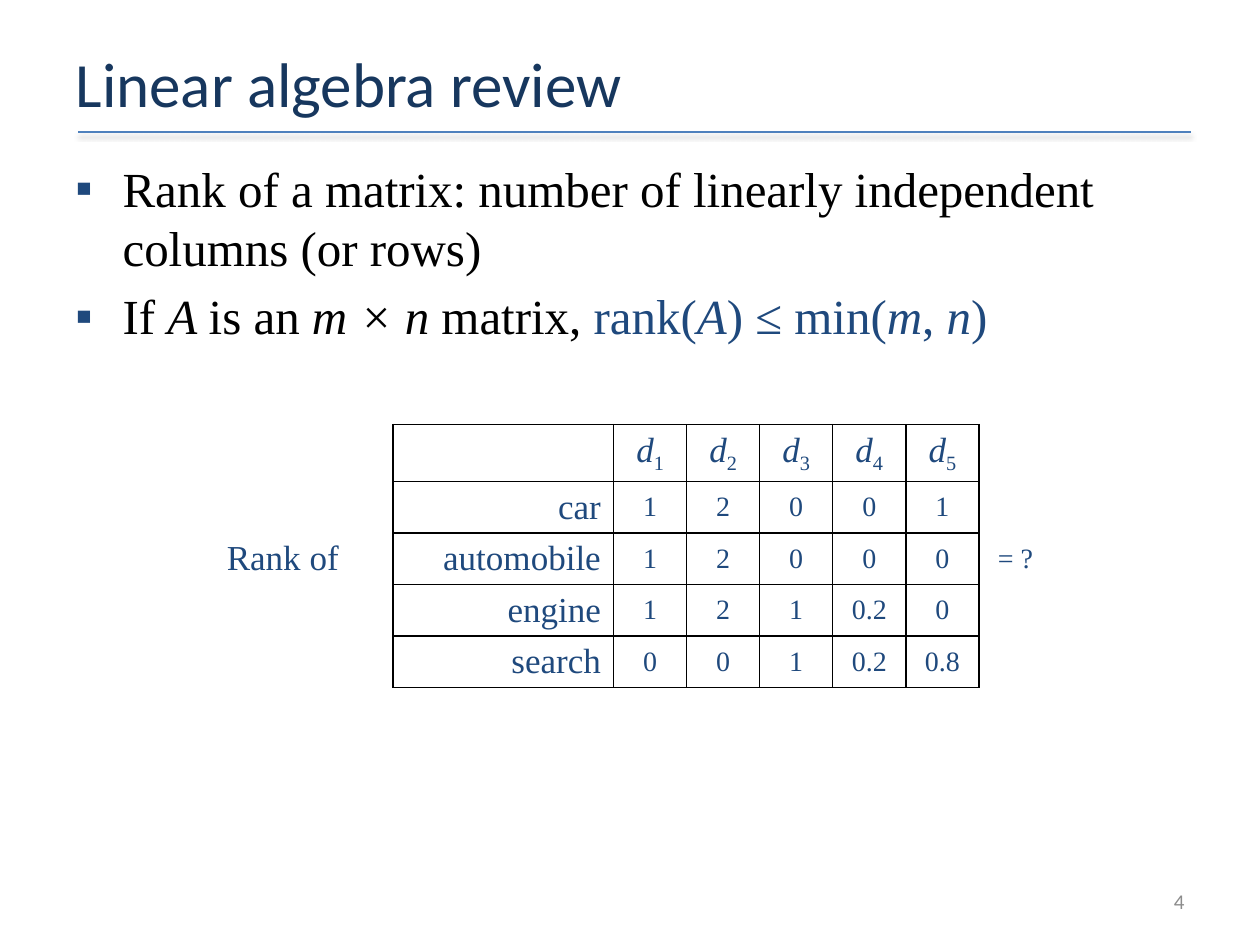
from lxml import etree
from pptx import Presentation
from pptx.dml.color import RGBColor
from pptx.enum.shapes import MSO_CONNECTOR
from pptx.enum.text import MSO_ANCHOR, PP_ALIGN
from pptx.oxml.ns import qn
from pptx.util import Pt

LEFT, MID, RIGHT = PP_ALIGN.LEFT, PP_ALIGN.CENTER, PP_ALIGN.RIGHT
CENTER = MSO_ANCHOR.MIDDLE
STRAIGHT = MSO_CONNECTOR.STRAIGHT
SERIF, SANS = "Times New Roman", "Calibri"
BLUE, BLACK = "1F497D", "000000"

TERMS = ["car", "automobile", "engine", "search"]
GRID = [
    ["1", "2", "0", "0", "1"],
    ["1", "2", "0", "0", "0"],
    ["1", "2", "1", "0.2", "0"],
    ["0", "0", "1", "0.2", "0.8"],
]
POINTS = [
    [("Rank of a matrix: number of linearly independent columns (or rows)", BLACK, False)],
    [
        ("If ", BLACK, False), ("A ", BLACK, True), ("is an ", BLACK, False),
        ("m × n ", BLACK, True), ("matrix, ", BLACK, False),
        ("rank(", BLUE, False), ("A", BLUE, True), (") ≤ min(", BLUE, False),
        ("m", BLUE, True), (", ", BLUE, False), ("n", BLUE, True), (")", BLUE, False),
    ],
]


def rgb(code):
    """Turn a hex string into a colour."""
    return RGBColor.from_string(code)


def style(run, size, color, face=SERIF, slant=False):
    """Set the font of a run."""
    font = run.font
    font.size, font.name, font.italic = Pt(size), face, slant
    font.color.rgb = rgb(color)


def node(parent, tag, **attrs):
    """Add a drawing element under a parent."""
    return etree.SubElement(parent, qn("a:" + tag), attrs)


def place(shape, box):
    """Move a shape to a box given in points."""
    shape.left, shape.top, shape.width, shape.height = map(Pt, box)


def head(slide, box):
    """Set the title."""
    title = slide.shapes.title
    place(title, box)
    frame = title.text_frame
    frame.text = "Linear algebra review"
    frame.vertical_anchor = CENTER
    para = frame.paragraphs[0]
    para.alignment = LEFT
    style(para.runs[0], 36, "17375E", SANS)


def rule(slide, left, top, width):
    """Draw the line with a soft shadow below the title."""
    line = slide.shapes.add_connector(STRAIGHT, Pt(left), Pt(top), Pt(left + width), Pt(top))
    line.line.color.rgb = rgb("4F81BD")
    line.line.width = Pt(1)
    effects = node(line._element.spPr, "effectLst")
    shade = node(effects, "outerShdw", blurRad=str(Pt(3.1)), dist=str(Pt(1.6)),
                 dir="5400000", algn="ctr", rotWithShape="0")
    node(node(shade, "srgbClr", val=BLACK), "alpha", val="38000")


def bullet(para):
    """Give a paragraph a square bullet and a hanging indent."""
    props = para._p.get_or_add_pPr()
    props.set("marL", str(Pt(27)))
    props.set("indent", str(Pt(-27)))
    node(node(props, "buClr"), "srgbClr", val=BLUE)
    node(props, "buFont", typeface="Arial")
    node(props, "buChar", char="▪")


def body(slide, box):
    """Write the bullet points."""
    frame = slide.shapes.add_textbox(*map(Pt, box)).text_frame
    frame.word_wrap = True
    for i, parts in enumerate(POINTS):
        para = frame.add_paragraph() if i else frame.paragraphs[0]
        para.space_before = Pt(5.6)
        bullet(para)
        for text, color, slant in parts:
            run = para.add_run()
            run.text = text
            style(run, 28, color, slant=slant)


def write(cell, text, size, align=MID):
    """Write one table cell."""
    para = cell.text_frame.paragraphs[0]
    para.text = text
    para.alignment = align
    style(para.runs[0], size, BLUE)
    return para


def edge(cell, sides):
    """Draw black borders on some sides of a cell and hide the others."""
    props = cell._tc.get_or_add_tcPr()
    for i, side in enumerate("LRTB"):
        line = etree.Element(qn("a:ln" + side), w=str(Pt(1)))
        if side in sides:
            node(node(line, "solidFill"), "srgbClr", val=BLACK)
        else:
            node(line, "noFill")
        props.insert(i, line)


def matrix(slide, box):
    """Build the term matrix with its side labels."""
    rows, cols = len(TERMS) + 1, len(GRID[0]) + 3
    table = slide.shapes.add_table(rows, cols, *map(Pt, box)).table
    table.first_row = table.horz_banding = False
    wide = 126
    slim = (box[2] - 2 * wide) / (cols - 2)
    for i, col in enumerate(table.columns):
        col.width = Pt(wide if i < 2 else slim)
    top = 32.6
    for i, row in enumerate(table.rows):
        row.height = Pt((box[3] - top) / (rows - 1) if i else top)
        for j, cell in enumerate(row.cells):
            cell.fill.background()
            cell.vertical_anchor = CENTER
            cell.margin_top = cell.margin_bottom = Pt(2.5)
            edge(cell, {0: "R", cols - 1: "L"}.get(j, "LRTB"))
    for j in range(1, cols - 2):
        para = write(table.cell(0, j + 1), "d", 20)
        para.runs[0].font.italic = True
        sub = para.add_run()
        sub.text = str(j)
        style(sub, 20, BLUE)
        sub.font._element.set("baseline", "-25000")
    for i, (term, nums) in enumerate(zip(TERMS, GRID), 1):
        write(table.cell(i, 1), term, 20, RIGHT)
        for j, num in enumerate(nums, 2):
            write(table.cell(i, j), num, 16)
    write(table.cell(2, 0), "Rank of", 20)
    write(table.cell(2, cols - 1), "= ?", 16)


def number(slide, box):
    """Write the slide number."""
    frame = slide.shapes.add_textbox(*map(Pt, box)).text_frame
    frame.word_wrap = True
    frame.vertical_anchor = CENTER
    frame.text = "4"
    para = frame.paragraphs[0]
    para.alignment = RIGHT
    style(para.runs[0], 12, "8C8C8C", SANS)


def main():
    """Build and save the slide."""
    deck = Presentation()
    deck.slide_width, deck.slide_height = Pt(720), Pt(540)
    slide = deck.slides.add_slide(deck.slide_layouts[5])
    rule(slide, 44.6, 75.6, 635.8)
    head(slide, (36, 21.6, 648, 51))
    number(slide, (516, 500.4, 168, 28.8))
    body(slide, (36, 87, 648, 126))
    matrix(slide, (98.6, 242.6, 502.6, 150.4))
    deck.save("out.pptx")


if __name__ == "__main__":
    main()
